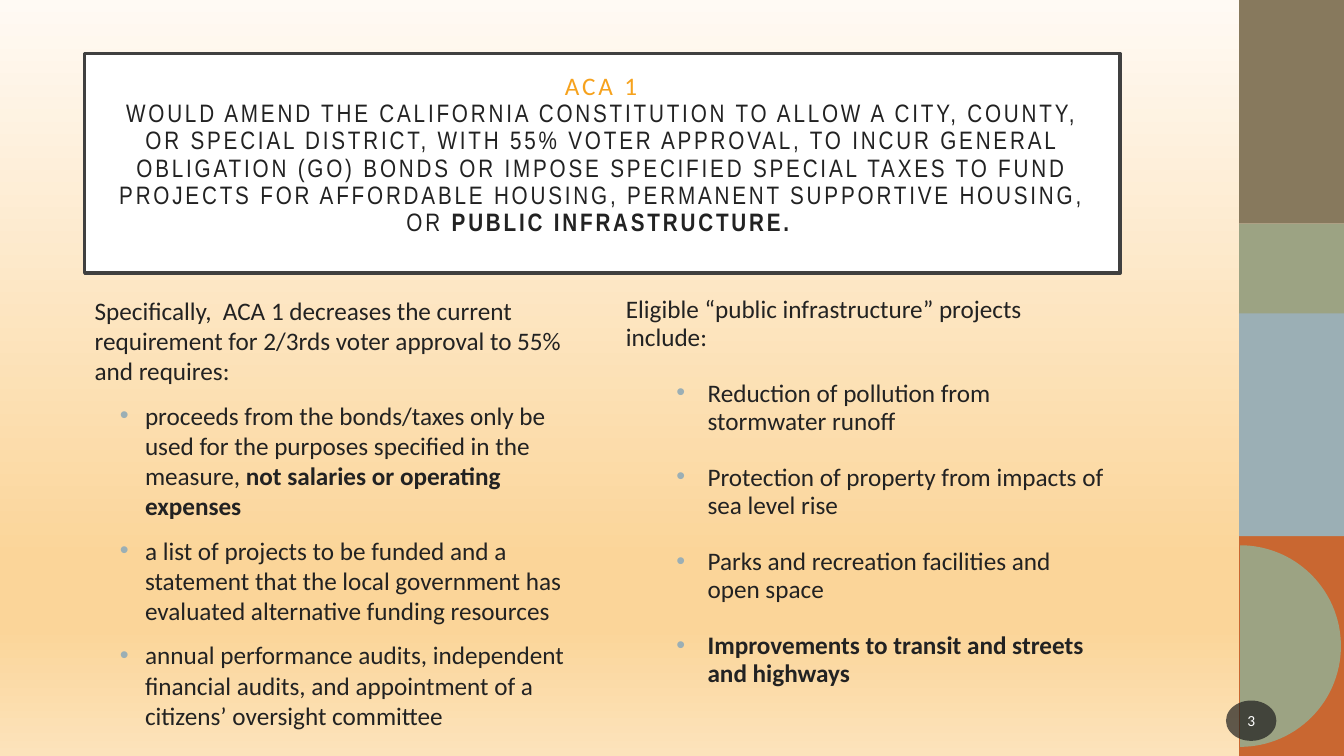
from dataclasses import dataclass
from math import cos, pi, sin

from lxml.etree import SubElement
from pptx import Presentation
from pptx.dml.color import RGBColor
from pptx.enum.shapes import MSO_SHAPE
from pptx.enum.text import MSO_ANCHOR, PP_ALIGN
from pptx.oxml.ns import qn
from pptx.util import Inches, Pt


@dataclass(frozen=True)
class Theme:
    ink: str = "222222"
    white: str = "FFFFFF"
    gold: str = "F6A21D"
    frame: str = "404040"
    badge: str = "1D1D1D"
    orange: str = "C96731"
    blue: str = "9BAFB5"
    brown: str = "87795D"
    green: str = "9CA383"
    backdrop: tuple = ((0, "FFFAF4"), (74, "FBD599"), (83, "FBD599"), (100, "FCE3BB"))
    body_font: str = "Calibri"
    title_font: str = "Arial Narrow"
    text_size: int = 18
    number_size: int = 11


theme = Theme()


def style_shape(shape, color):
    shape.shadow.inherit = False
    shape.fill.solid()
    shape.fill.fore_color.rgb = RGBColor.from_string(color)
    shape.line.fill.background()


def style_font(font, name, size, color):
    font.name = name
    font.size = Pt(size)
    font.color.rgb = RGBColor.from_string(color)


presentation = Presentation()
presentation.slide_width = Inches(13.33)
presentation.slide_height = Inches(7.5)
slide = presentation.slides.add_slide(presentation.slide_layouts[6])

# Background gradient, running downwards
background = slide.background.fill
background.gradient()
background.gradient_angle = 270
stops = slide.element.find(".//" + qn("a:gsLst"))
for stop in list(stops):
    stops.remove(stop)
for position, color in theme.backdrop:
    stop = SubElement(stops, qn("a:gs"), pos=str(position * 1000))
    SubElement(stop, qn("a:srgbClr"), val=color)

# Colour bands on the right edge
for top, height, color in [
    (5.28, 2.22, theme.orange),
    (3.1, 2.22, theme.blue),
    (0, 2.22, theme.brown),
    (2.22, 0.89, theme.green),
]:
    band = slide.shapes.add_shape(
        MSO_SHAPE.RECTANGLE, Inches(12.29), Inches(top), Inches(1.11), Inches(height)
    )
    style_shape(band, color)

# Half disc, flat side on the left
center_x, center_y, radius, steps = 12.3, 6.41, 1, 60
angles = [-pi / 2 + pi * step / steps for step in range(steps + 1)]
arc = [
    (Inches(center_x + radius * cos(angle)), Inches(center_y + radius * sin(angle)))
    for angle in angles
]
builder = slide.shapes.build_freeform(*arc[0])
builder.add_line_segments(arc[1:], close=True)
style_shape(builder.convert_to_shape(), theme.green)

# Framed title
title = slide.shapes.add_shape(
    MSO_SHAPE.RECTANGLE, Inches(0.84), Inches(0.53), Inches(10.27), Inches(2.18)
)
style_shape(title, theme.white)
title.line.color.rgb = RGBColor.from_string(theme.frame)
title.line.width = Pt(2.5)
frame = title.text_frame
frame.word_wrap = True
frame.vertical_anchor = MSO_ANCHOR.TOP
frame.margin_left = frame.margin_right = Inches(0.2)
frame.margin_top = frame.margin_bottom = Inches(0.2)
paragraph = frame.paragraphs[0]
paragraph.alignment = PP_ALIGN.CENTER
paragraph.line_spacing = 0.9
for text, font_name, color, bold in [
    ("ACA 1", theme.body_font, theme.gold, False),
    (
        "WOULD AMEND THE CALIFORNIA CONSTITUTION TO ALLOW A CITY, COUNTY, OR SPECIAL "
        "DISTRICT, WITH 55% VOTER APPROVAL, TO INCUR GENERAL OBLIGATION (GO) BONDS OR "
        "IMPOSE SPECIFIED SPECIAL TAXES TO FUND PROJECTS FOR AFFORDABLE HOUSING, "
        "PERMANENT SUPPORTIVE HOUSING, OR ",
        theme.title_font, theme.ink, False,
    ),
    ("PUBLIC INFRASTRUCTURE. ", theme.title_font, theme.ink, True),
]:
    if paragraph.runs and not bold:
        paragraph.add_line_break()
    run = paragraph.add_run()
    run.text = text
    style_font(run.font, font_name, theme.text_size, color)
    run.font.bold = bold
    run.font._element.set("spc", "200")

# Slide number badge
badge = slide.shapes.add_shape(
    MSO_SHAPE.OVAL, Inches(12.16), Inches(6.95), Inches(0.5), Inches(0.4)
)
style_shape(badge, theme.badge)
badge_color = badge._element.spPr.find(qn("a:solidFill"))[0]
SubElement(badge_color, qn("a:alpha"), val="70000")
frame = badge.text_frame
frame.margin_left = frame.margin_right = Inches(0.02)
frame.vertical_anchor = MSO_ANCHOR.MIDDLE
paragraph = frame.paragraphs[0]
paragraph.text = "3"
paragraph.alignment = PP_ALIGN.CENTER
style_font(paragraph.font, theme.body_font, theme.number_size, theme.white)

# Two body columns: a lead sentence, then bullets of (plain, bold) text
columns = [
    (
        0.84, 4.4, 0.5, 0.25, 10, None,
        [
            ("Specifically,  ACA 1 decreases the current requirement for 2/3rds voter "
             "approval to 55% and requires:", ""),
            ("proceeds from the bonds/taxes only be used for the purposes specified in "
             "the measure, ", "not salaries or operating expenses"),
            ("a list of projects to be funded and a statement that the local government "
             "has evaluated alternative funding resources", ""),
            ("annual performance audits, independent financial audits, and appointment "
             "of a citizens’ oversight committee", ""),
        ],
    ),
    (
        6.11, 4, 0.81, 0.31, 20, Pt(20),
        [
            ("Eligible “public infrastructure” projects include:", ""),
            ("Reduction of pollution from stormwater runoff", ""),
            ("Protection of property from impacts of sea level rise", ""),
            ("Parks and recreation facilities and open space", ""),
            ("", "Improvements to transit and streets and highways"),
        ],
    ),
]
for left, height, indent, hanging, gap, line_spacing, items in columns:
    column = slide.shapes.add_textbox(
        Inches(left), Inches(2.88), Inches(4.94), Inches(height)
    )
    frame = column.text_frame
    frame.word_wrap = True
    for index, (plain, strong) in enumerate(items):
        paragraph = frame.paragraphs[0] if index == 0 else frame.add_paragraph()
        if index > 0:
            properties = paragraph._element.get_or_add_pPr()
            properties.set("marL", str(Inches(indent)))
            properties.set("indent", str(-Inches(hanging)))
            bullet_color = SubElement(properties, qn("a:buClr"))
            SubElement(bullet_color, qn("a:srgbClr"), val=theme.blue)
            SubElement(properties, qn("a:buFont"), typeface="Arial")
            SubElement(properties, qn("a:buChar"), char="•")
            paragraph.space_before = Pt(gap)
        paragraph.line_spacing = line_spacing
        style_font(paragraph.font, theme.body_font, theme.text_size, theme.ink)
        for text, bold in ((plain, False), (strong, True)):
            if text:
                run = paragraph.add_run()
                run.text = text
                run.font.bold = bold

presentation.save("out.pptx")
